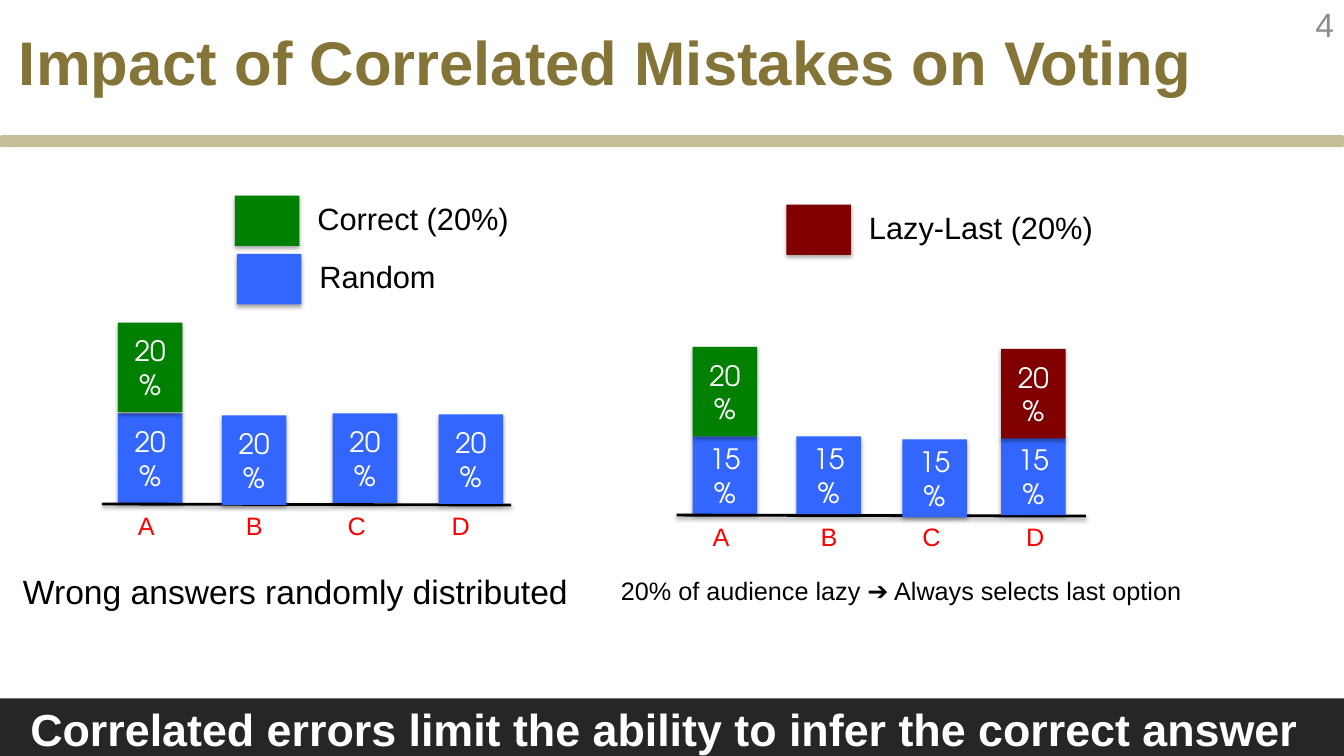
from lxml import etree
from pptx import Presentation
from pptx.dml.color import RGBColor
from pptx.enum.shapes import MSO_CONNECTOR, MSO_SHAPE
from pptx.enum.text import MSO_ANCHOR, PP_ALIGN
from pptx.oxml.ns import qn
from pptx.util import Inches, Pt

RECT, ROUND = MSO_SHAPE.RECTANGLE, MSO_SHAPE.ROUNDED_RECTANGLE
STRAIGHT = MSO_CONNECTOR.STRAIGHT
LEFT, CENTER, RIGHT = PP_ALIGN.LEFT, PP_ALIGN.CENTER, PP_ALIGN.RIGHT
TOP, MIDDLE = MSO_ANCHOR.TOP, MSO_ANCHOR.MIDDLE

BLACK, WHITE, RED, GRAY = "000000", "FFFFFF", "FF0000", "8C8C8C"
GOLD, SAND, CHARCOAL = "857437", "C4BD97", "262626"
BLUE, GREEN, MAROON = "3366FF", "008000", "800000"


def rgb(value):
    return RGBColor.from_string(value)


class Deck:
    font, bar_font = "Arial", "TeX Gyre Adventor"
    bar_width = 0.64

    def __init__(self):
        self.prs = Presentation()
        self.prs.slide_width, self.prs.slide_height = Inches(13.33), Inches(7.5)
        self.slide = self.prs.slides.add_slide(self.prs.slide_layouts[6])

    def set_text(self, tf, text, size, color, align=LEFT, anchor=TOP, bold=False, font=font):
        tf.vertical_anchor = anchor
        p = tf.paragraphs[0]
        p.text, p.alignment = text, align
        p.font.name, p.font.size, p.font.bold = font, Pt(size), bold
        p.font.color.rgb = rgb(color)

    def text(self, x, y, w, h, text, size, color=BLACK, wrap=False, **style):
        tb = self.slide.shapes.add_textbox(Inches(x), Inches(y), Inches(w), Inches(h))
        tb.text_frame.word_wrap = wrap
        self.set_text(tb.text_frame, text, size, color, **style)
        return tb

    def box(self, x, y, w, h, fill, kind=RECT):
        sp = self.slide.shapes.add_shape(kind, Inches(x), Inches(y), Inches(w), Inches(h))
        sp.shadow.inherit = False
        sp.fill.solid()
        sp.fill.fore_color.rgb = rgb(fill)
        sp.line.fill.background()
        return sp

    def drop_shadow(self, sp, opacity, distance):
        props = sp._element.spPr
        for old in props.findall(qn("a:effectLst")):
            props.remove(old)
        effects = etree.SubElement(props, qn("a:effectLst"))
        shadow = etree.SubElement(effects, qn("a:outerShdw"), blurRad=str(Pt(3.1)),
                                  dist=str(Pt(distance)), dir="5400000", rotWithShape="0")
        color = etree.SubElement(shadow, qn("a:srgbClr"), val=BLACK)
        etree.SubElement(color, qn("a:alpha"), val=str(opacity * 1000))

    def bar(self, x, y, h, fill, label):
        sp = self.box(x, y, self.bar_width, h, fill)
        self.drop_shadow(sp, 35, 1.8)
        self.set_text(sp.text_frame, label, 20, WHITE, CENTER, MIDDLE, font=self.bar_font)

    def legend(self, x, y, w, fill, label):
        self.drop_shadow(self.box(x, y, self.bar_width, 0.5, fill), 35, 1.8)
        self.text(x + 0.72, y - 0.01, w, 0.47, label, 22)

    def axis(self, x, y):
        line = self.slide.shapes.add_connector(
            STRAIGHT, Inches(x), Inches(y), Inches(x + 4.06), Inches(y + 0.01))
        line.line.color.rgb, line.line.width = rgb(BLACK), Pt(2)
        self.drop_shadow(line, 38, 1.6)
        for name, dx in zip("ABCD", (0.26, 1.33, 2.34, 3.37)):
            self.text(x + dx, y + 0.01, 0.31, 0.4, name, 18, RED)

    def votes(self, x, axis_y, height, label, bars, extras):
        """Base bars stand on the axis; extra bars are stacked above them."""
        for i, (bar_x, bar_y) in enumerate(bars):
            self.bar(bar_x, bar_y, height, BLUE, label)
            if i == 0:
                self.axis(x, axis_y)
        for bar_x, bar_y, fill in extras:
            self.bar(bar_x, bar_y, 0.89, fill, "20%")


def main():
    d = Deck()

    # Title rule, bottom banner and slide number
    d.box(0, 1.34, 13.33, 0.12, SAND, ROUND)
    banner = d.box(0, 6.93, 13.33, 0.6, CHARCOAL, ROUND)
    banner.adjustments[0] = 0
    banner.text_frame.margin_right = Inches(0.24)
    d.set_text(banner.text_frame, "Correlated errors limit the ability to infer the correct answer",
               32, WHITE, CENTER, MIDDLE, bold=True)
    d.text(12.8, 0, 0.53, 0.48, "4", 24, GRAY, wrap=True, align=RIGHT, anchor=MIDDLE)

    # Votes when wrong answers are random
    d.votes(1.01, 5, 0.89, "20%",
            [(1.17, 4.1), (2.2, 4.12), (3.3, 4.1), (4.35, 4.11)],
            [(1.17, 3.2, GREEN)])
    d.legend(2.33, 1.94, 2.12, GREEN, "Correct (20%)")
    d.legend(2.35, 2.52, 1.37, BLUE, "Random")

    # Votes when some of the audience picks the last option
    d.votes(6.71, 5.11, 0.77, "15%",
            [(6.87, 4.33), (7.9, 4.33), (8.95, 4.36), (9.93, 4.34)],
            [(6.87, 3.44, GREEN), (9.93, 3.46, MAROON)])
    d.legend(7.8, 2.03, 2.45, MAROON, "Lazy-Last (20%)")

    # Captions and title
    d.text(6.06, 5.66, 5.96, 0.4, "20% of audience lazy ➔ Always selects last option", 18)
    d.text(0.13, 5.61, 5.66, 0.5, "Wrong answers randomly distributed", 24)
    title = d.text(0.09, 0.14, 11.94, 1.25, "Impact of Correlated Mistakes on Voting",
                   44, GOLD, wrap=True, bold=True)
    title.text_frame.margin_top = Inches(0.1)

    d.prs.save("out.pptx")


if __name__ == "__main__":
    main()
